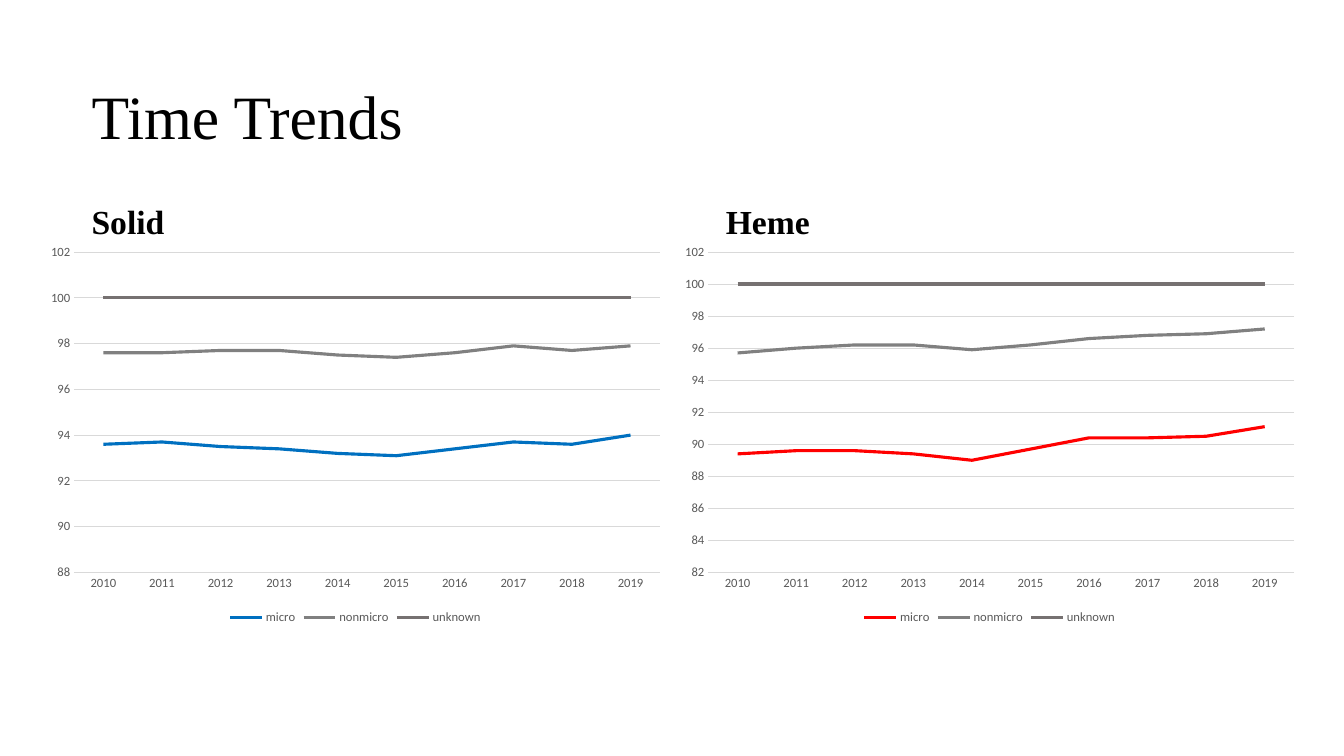
from pptx import Presentation
from pptx.chart.data import CategoryChartData
from pptx.dml.color import RGBColor
from pptx.enum.chart import XL_CHART_TYPE, XL_LEGEND_POSITION, XL_TICK_MARK
from pptx.enum.text import MSO_ANCHOR
from pptx.util import Inches, Pt

LINE_STACKED = XL_CHART_TYPE.LINE_STACKED
LEGEND_BOTTOM = XL_LEGEND_POSITION.BOTTOM
NO_TICK = XL_TICK_MARK.NONE
MIDDLE, TOP = MSO_ANCHOR.MIDDLE, MSO_ANCHOR.TOP

COLORS = {
    "text": "000000",
    "label": "595959",
    "grid": "D9D9D9",
    "solid": "0070C0",
    "heme": "FF0000",
    "nonmicro": "808080",
    "unknown": "767171",
}
YEARS = [str(year) for year in range(2010, 2020)]
PANELS = [
    {
        "heading": "Solid", "left": 0.38, "heading_left": 0.81,
        "micro_color": "solid", "minimum": 88,
        "micro": [93.6, 93.7, 93.5, 93.4, 93.2, 93.1, 93.4, 93.7, 93.6, 94.0],
        "nonmicro": [4.0, 3.9, 4.2, 4.3, 4.3, 4.3, 4.2, 4.2, 4.1, 3.9],
        "unknown": [2.4, 2.4, 2.3, 2.3, 2.5, 2.6, 2.4, 2.1, 2.3, 2.1],
    },
    {
        "heading": "Heme", "left": 6.67, "heading_left": 7.1,
        "micro_color": "heme", "minimum": 82,
        "micro": [89.4, 89.6, 89.6, 89.4, 89.0, 89.7, 90.4, 90.4, 90.5, 91.1],
        "nonmicro": [6.3, 6.4, 6.6, 6.8, 6.9, 6.5, 6.2, 6.4, 6.4, 6.1],
        "unknown": [4.3, 4.0, 3.8, 3.8, 4.1, 3.8, 3.4, 3.2, 3.1, 2.8],
    },
]


def color(name):
    return RGBColor.from_string(COLORS[name])


def add_text(page, text, left, top, width, height, size, bold=False,
             anchor=TOP, spacing=1.0):
    box = page.shapes.add_textbox(
        Inches(left), Inches(top), Inches(width), Inches(height))
    frame = box.text_frame
    frame.word_wrap = True
    frame.vertical_anchor = anchor
    para = frame.paragraphs[0]
    para.line_spacing = spacing
    span = para.add_run()
    span.text = text
    span.font.name = "Times New Roman"
    span.font.size = Pt(size)
    span.font.bold = bold
    span.font.color.rgb = color("text")


deck = Presentation()
deck.slide_width = Inches(13.33)
deck.slide_height = Inches(7.5)
page = deck.slides.add_slide(deck.slide_layouts[6])

add_text(page, "Time Trends", 0.81, 0.46, 11.5, 1.45, size=44,
         anchor=MIDDLE, spacing=0.9)

for panel in PANELS:
    data = CategoryChartData(number_format="General")
    data.categories = YEARS
    for name in ("micro", "nonmicro", "unknown"):
        data.add_series(name, panel[name])
    chart = page.shapes.add_chart(
        LINE_STACKED, Inches(panel["left"]), Inches(2.35),
        Inches(6.29), Inches(3.89), data).chart
    chart.has_title = False
    chart.font.name = "Calibri"
    chart.font.size = Pt(10)
    chart.font.color.rgb = color("text")

    chart.has_legend = True
    chart.legend.position = LEGEND_BOTTOM
    chart.legend.include_in_layout = False

    years, values = chart.category_axis, chart.value_axis
    for axis in (years, values):
        axis.major_tick_mark = NO_TICK
        axis.minor_tick_mark = NO_TICK
    years.format.line.color.rgb = color("grid")
    years.format.line.width = Pt(0.75)
    values.format.line.fill.background()
    values.minimum_scale = panel["minimum"]
    values.maximum_scale = 102
    values.major_unit = 2
    values.major_gridlines.format.line.color.rgb = color("grid")
    values.major_gridlines.format.line.width = Pt(0.75)

    for font in (chart.legend.font, years.tick_labels.font, values.tick_labels.font):
        font.name = "Calibri"
        font.size = Pt(9)
        font.color.rgb = color("label")

    plot = chart.plots[0]
    plot.vary_by_categories = False
    line_colors = (panel["micro_color"], "nonmicro", "unknown")
    for series, line_color in zip(plot.series, line_colors):
        series.smooth = False
        series.format.line.color.rgb = color(line_color)
        series.format.line.width = Pt(2.25)

    add_text(page, panel["heading"], panel["heading_left"], 1.94, 4.75, 0.5,
             size=24, bold=True)

deck.save("out.pptx")
